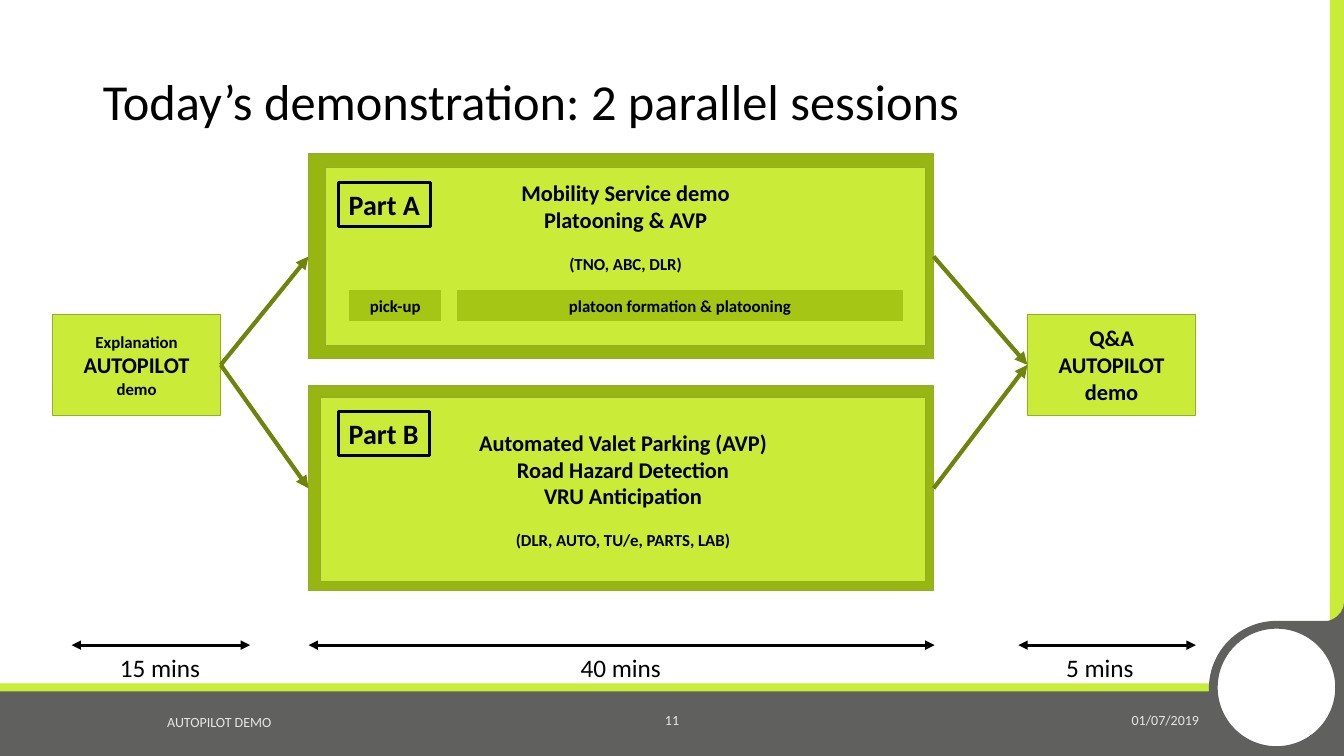
from lxml import etree
from pptx import Presentation
from pptx.dml.color import RGBColor
from pptx.enum.shapes import MSO_CONNECTOR, MSO_SHAPE
from pptx.enum.text import MSO_ANCHOR, PP_ALIGN
from pptx.oxml.ns import qn
from pptx.util import Inches, Pt

RECT, OVAL = MSO_SHAPE.RECTANGLE, MSO_SHAPE.OVAL
TEAR, ARC = MSO_SHAPE.TEAR, MSO_SHAPE.BLOCK_ARC
STRAIGHT = MSO_CONNECTOR.STRAIGHT
TOP, MIDDLE = MSO_ANCHOR.TOP, MSO_ANCHOR.MIDDLE
LEFT, CENTER, RIGHT = PP_ALIGN.LEFT, PP_ALIGN.CENTER, PP_ALIGN.RIGHT
SIDE_LEFT, SIDE_RIGHT = 1, 3
FONT = "Calibri"
COLORS = {
    "lime": "CAEB37", "olive": "97B612", "edge": "95AE29", "step": "A5C614",
    "arrow": "6E840D", "gray": "60605E", "footer": "E7E6E6",
    "black": "000000", "white": "FFFFFF",
}

# Content: a paragraph is a list of (text, size) runs
TITLE = "Today’s demonstration: 2 parallel sessions"
FOOTERS = [  # text, box, alignment
    ("01/07/2019", (10.89, 6.95, 1.1, 0.39), RIGHT),
    ("AUTOPILOT DEMO", (1.56, 6.97, 3.15, 0.39), LEFT),
    ("11", (6.47, 6.95, 0.39, 0.39), CENTER),
]
BACKDROP = [  # shape, box, fill, line
    (RECT, (13.19, 0, 0.14, 7.5), "lime", None),
    (RECT, (0, 6.83, 13.33, 0.67), "gray", None),
    (RECT, (0, 6.78, 13.33, 0.08), "lime", None),
    (TEAR, (11.99, 6.16, 1.34, 1.34), "gray", None),
    (OVAL, (12.07, 6.23, 1.18, 1.18), "white", "gray"),
]
INTRO = [[("Explanation", 12)], [("AUTOPILOT", 16), (" demo", 12)]]
CLOSING = [[("Q&A", 16)], [("AUTOPILOT demo", 16)]]
PARTS = [  # name, label box, panel box, anchor, topics, partners
    ("Part A", (3.36, 1.81, 0.91, 0.44), (3.23, 1.66, 5.95, 1.77), TOP,
     ["Mobility Service demo", "Platooning & AVP"], "(TNO, ABC, DLR)"),
    ("Part B", (3.36, 4.08, 0.9, 0.44), (3.18, 3.94, 6, 1.83), MIDDLE,
     ["Automated Valet Parking (AVP)", "Road Hazard Detection", "VRU Anticipation"],
     "(DLR, AUTO, TU/e, PARTS, LAB)"),
]
STEPS = [("pick-up", 3.47, 0.9), ("platoon formation & platooning", 4.54, 4.41)]
DURATIONS = [("15 mins", 0.71, 2.48), ("40 mins", 3.06, 9.27), ("5 mins", 10.1, 11.86)]

FRAME_X, FRAME_Y, FRAME_W, FRAME_H, FRAME_STEP = 3.06, 1.53, 6.2, 2.03, 2.3
END_Y, END_W, END_H = 3.12, 1.67, 1
TIME_Y, TIME_W = 6.4, 1.01

prs = Presentation()
prs.slide_width, prs.slide_height = Inches(13.33), Inches(7.5)
s = prs.slides.add_slide(prs.slide_layouts[5])


def rgb(name):
    return RGBColor.from_string(COLORS[name])


def write(sp, paragraphs, color="black", bold=False, align=CENTER,
          anchor=MIDDLE, wrap=True):
    tf = sp.text_frame
    tf.word_wrap, tf.vertical_anchor = wrap, anchor
    for i, runs in enumerate(paragraphs):
        p = tf.paragraphs[0] if i == 0 else tf.add_paragraph()
        p.alignment = align
        for text, size in runs:
            r = p.add_run()
            r.text = text
            for key, value in {"name": FONT, "size": Pt(size), "bold": bold}.items():
                setattr(r.font, key, value)
            r.font.color.rgb = rgb(color)
    return tf


def add_shape(kind, box, fill, line=None):
    sp = s.shapes.add_shape(kind, *map(Inches, box))
    sp.shadow.inherit = False
    sp.fill.solid()
    sp.fill.fore_color.rgb = rgb(fill)
    if line:
        sp.line.color.rgb = rgb(line)
        sp.line.width = Pt(1)
    else:
        sp.line.fill.background()
    return sp


def add_text(box, text, size, **style):
    sp = s.shapes.add_textbox(*map(Inches, box))
    write(sp, [[(text, size)]], **style)
    return sp


def add_arrow(x1, y1, x2, y2, color, width, ends=("tailEnd",)):
    cx = s.shapes.add_connector(STRAIGHT, *map(Inches, (x1, y1, x2, y2)))
    cx.line.color.rgb = rgb(color)
    cx.line.width = Pt(width)
    for end in ends:
        etree.SubElement(cx.line._get_or_add_ln(), qn("a:" + end), type="triangle")
    etree.SubElement(cx._element.spPr, qn("a:effectLst"))
    return cx


def join(source, target):
    cx = add_arrow(0, 0, 1, 1, "arrow", 3)
    cx.begin_connect(source, SIDE_RIGHT)
    cx.end_connect(target, SIDE_LEFT)


# Backdrop
for kind, box, fill, line in BACKDROP:
    add_shape(kind, box, fill, line)
corner = add_shape(ARC, (12.71, 5.55, 0.78, 0.85), "gray")
corner.rotation = 90
for i, value in enumerate((161.8, 0, 0.25)):
    corner.adjustments[i] = value

# Title and footer
title = s.shapes.title
title.left, title.top, title.width, title.height = map(Inches, (0.92, 0.4, 11.08, 1.26))
tf = write(title, [[(TITLE, 36)]], align=LEFT)
tf.paragraphs[0].line_spacing = 0.9
for text, box, align in FOOTERS:
    add_text(box, text, 10, color="footer", align=align)

# Start and end boxes
ends = []
for x, paragraphs in ((0.52, INTRO), (10.19, CLOSING)):
    sp = add_shape(RECT, (x, END_Y, END_W, END_H), "lime", "edge")
    write(sp, paragraphs, bold=True)
    ends.append(sp)
intro, closing = ends

# Parallel parts
frames = []
for i, (name, label_box, panel_box, anchor, topics, partners) in enumerate(PARTS):
    frame_box = (FRAME_X, FRAME_Y + i * FRAME_STEP, FRAME_W, FRAME_H)
    frames.append(add_shape(RECT, frame_box, "olive", "edge"))
    panel = add_shape(RECT, panel_box, "lime", "edge")
    tf = write(panel, [[(topic, 16)] for topic in topics] + [[(partners, 12)]],
               bold=True, anchor=anchor)
    tf.paragraphs[-1].space_before = Pt(14.6)
    if anchor == TOP:
        tf.margin_top = Inches(0.12)
    label = add_text(label_box, name, 20, bold=True, align=LEFT, anchor=TOP, wrap=False)
    label.line.color.rgb = rgb("black")
    label.line.width = Pt(2.25)

# Steps of the first part
for text, x, width in STEPS:
    sp = add_shape(RECT, (x, 2.88, width, 0.3), "step", "step")
    write(sp, [[(text, 12)]], bold=True)

# Flow arrows
for frame in frames:
    join(intro, frame)
for frame in frames:
    join(frame, closing)

# Time line
for text, x1, x2 in DURATIONS:
    add_arrow(x1, TIME_Y, x2, TIME_Y, "black", 2.25, ("headEnd", "tailEnd"))
    add_text(((x1 + x2 - TIME_W) / 2, TIME_Y + 0.02, TIME_W, 0.4), text, 18,
             align=LEFT, anchor=TOP)

prs.save("out.pptx")
